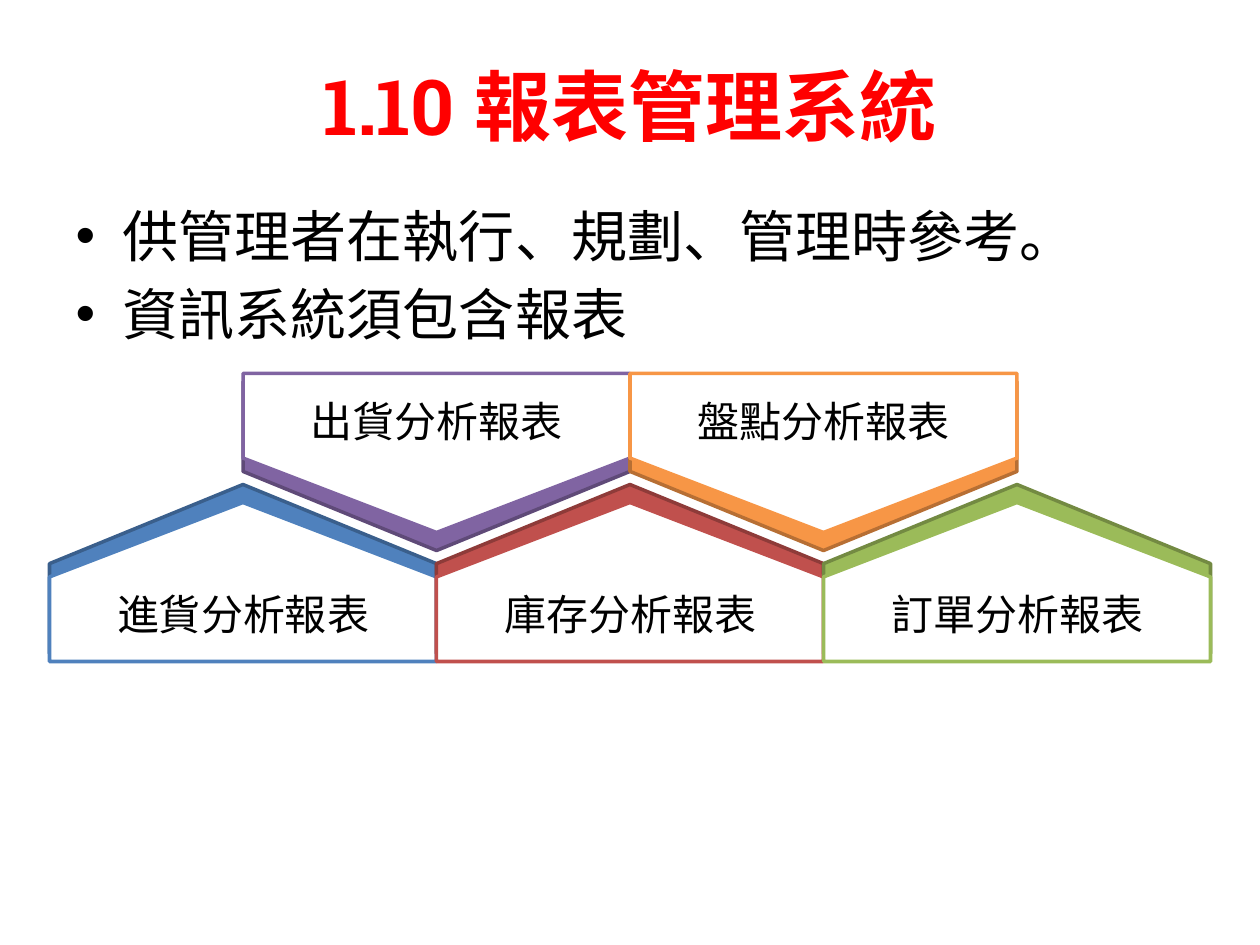
from dataclasses import dataclass

from pptx import Presentation
from pptx import util as u
from pptx.dml.color import RGBColor
from pptx.enum import shapes, text

PX_PER_INCH = 126
FONT = "Roboto Slab"
COLORS = {
    "title": "FF0000",
    "ink": "000000",
    "paper": "FFFFFF",
    "blue": "4F81BD",
    "blue_edge": "3A5F8C",
    "red": "C0504D",
    "red_edge": "8E3B39",
    "green": "9BBB59",
    "green_edge": "738A42",
    "purple": "8064A2",
    "purple_edge": "5F4A78",
    "orange": "F79646",
    "orange_edge": "B76F34",
}
FIRST_CENTER = 243
PITCH = 387
BACK_DEPTH = 169
FRONT_DEPTH = 159
POINT_RATIO = 0.468
LABEL_WIDTH = 307
LABEL_HEIGHT = 63


@dataclass(frozen=True)
class Tier:
    rotation: int
    back_center: int
    front_center: int
    label_center: int


@dataclass(frozen=True)
class Report:
    label: str
    color: str
    half_steps: int
    tier: Tier


LOWER = Tier(270, 569, 582, 614)
UPPER = Tier(90, 466, 453, 421)
REPORTS = [
    Report("進貨分析報表", "blue", 0, LOWER),
    Report("庫存分析報表", "red", 2, LOWER),
    Report("訂單分析報表", "green", 4, LOWER),
    Report("出貨分析報表", "purple", 1, UPPER),
    Report("盤點分析報表", "orange", 3, UPPER),
]


def px(length: float) -> u.Emu:
    return u.Emu(round(length * u.Inches(1) / PX_PER_INCH))


def color(name: str) -> RGBColor:
    return RGBColor.from_string(COLORS[name])


def place(shape, left: int, top: int, width: int, height: int) -> None:
    shape.left, shape.top = px(left), px(top)
    shape.width, shape.height = px(width), px(height)


def style(paragraph, size: int, ink: str, bold: bool = False) -> None:
    paragraph.font.name = FONT
    paragraph.font.size = u.Pt(size)
    paragraph.font.bold = bold
    paragraph.font.color.rgb = color(ink)


def add_pentagon(group, center_x: float, center_y: int, depth: int,
                 rotation: int, fill: str, line: str) -> None:
    pentagon = group.shapes.add_shape(
        shapes.MSO_SHAPE.PENTAGON,
        px(center_x - depth / 2), px(center_y - PITCH / 2), px(depth), px(PITCH))
    pentagon.adjustments[0] = POINT_RATIO
    pentagon.rotation = rotation
    pentagon.shadow.inherit = False
    pentagon.fill.solid()
    pentagon.fill.fore_color.rgb = color(fill)
    pentagon.line.color.rgb = color(line)
    pentagon.line.width = u.Pt(2)


def add_report(slide, report: Report) -> None:
    tier = report.tier
    center = FIRST_CENTER + report.half_steps * PITCH / 2
    group = slide.shapes.add_group_shape()
    add_pentagon(group, center, tier.back_center, BACK_DEPTH, tier.rotation,
                 report.color, f"{report.color}_edge")
    add_pentagon(group, center, tier.front_center, FRONT_DEPTH, tier.rotation,
                 "paper", report.color)
    label = group.shapes.add_textbox(
        px(center - LABEL_WIDTH / 2), px(tier.label_center - LABEL_HEIGHT / 2),
        px(LABEL_WIDTH), px(LABEL_HEIGHT))
    frame = label.text_frame
    frame.word_wrap = True
    frame.auto_size = text.MSO_AUTO_SIZE.SHAPE_TO_FIT_TEXT
    paragraph = frame.paragraphs[0]
    paragraph.text = report.label
    paragraph.alignment = text.PP_ALIGN.CENTER
    style(paragraph, 24, "ink")


def main() -> None:
    presentation = Presentation()
    presentation.slide_width = u.Inches(10)
    presentation.slide_height = u.Inches(7.5)
    slide = presentation.slides.add_slide(presentation.slide_layouts[1])

    title = slide.shapes.title
    place(title, 63, 26, 1134, 158)
    title.text_frame.text = "1.10 報表管理系統"
    style(title.text_frame.paragraphs[0], 44, "title", bold=True)

    body = slide.placeholders[1]
    place(body, 63, 195, 1134, 624)
    body.text_frame.text = "供管理者在執行、規劃、管理時參考。\n資訊系統須包含報表"
    for paragraph in body.text_frame.paragraphs:
        style(paragraph, 32, "ink")

    for report in REPORTS:
        add_report(slide, report)

    presentation.save("out.pptx")


if __name__ == "__main__":
    main()
